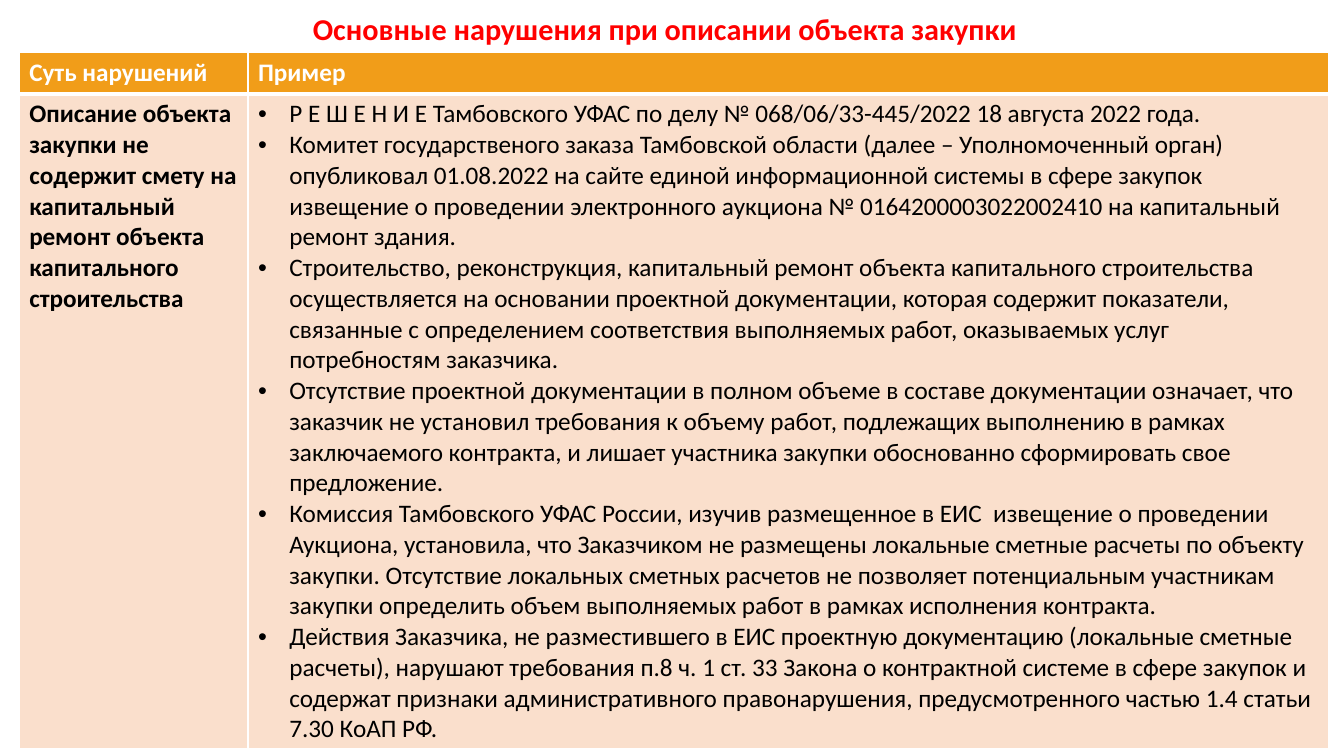
from lxml.etree import SubElement
from pptx import Presentation
from pptx.dml.color import RGBColor
from pptx.enum.text import MSO_ANCHOR, PP_ALIGN
from pptx.oxml.ns import qn
from pptx.util import Inches, Pt

RED = RGBColor(0xFF, 0x00, 0x00)
WHITE = RGBColor(0xFF, 0xFF, 0xFF)
BLACK = RGBColor(0x00, 0x00, 0x00)
ORANGE = RGBColor(0xF1, 0x9D, 0x19)
PEACH = RGBColor(0xFA, 0xDF, 0xCC)

TITLE = "Основные нарушения при описании объекта закупки"
HEADERS = ["Суть нарушений", "Пример"]
VIOLATION = (
    "Описание объекта закупки не содержит смету на капитальный ремонт "
    "объекта капитального строительства"
)
EXAMPLES = [
    "Р Е Ш Е Н И Е Тамбовского УФАС по делу № 068/06/33-445/2022 "
    "18 августа 2022 года.",
    "Комитет государственого заказа Тамбовской области (далее – Уполномоченный "
    "орган) опубликовал 01.08.2022 на сайте единой информационной системы в сфере "
    "закупок извещение о проведении электронного аукциона № 0164200003022002410 "
    "на капитальный ремонт здания.",
    "Строительство, реконструкция, капитальный ремонт объекта капитального "
    "строительства осуществляется на основании проектной документации, которая "
    "содержит показатели, связанные с определением соответствия выполняемых работ, "
    "оказываемых услуг потребностям заказчика.",
    "Отсутствие проектной документации в полном объеме в составе документации "
    "означает, что заказчик не установил требования к объему работ, подлежащих "
    "выполнению в рамках заключаемого контракта, и лишает участника закупки "
    "обоснованно сформировать свое предложение.",
    "Комиссия Тамбовского УФАС России, изучив размещенное в ЕИС  извещение о "
    "проведении Аукциона, установила, что Заказчиком не размещены локальные "
    "сметные расчеты по объекту закупки. Отсутствие локальных сметных расчетов не "
    "позволяет потенциальным участникам закупки определить объем выполняемых работ "
    "в рамках исполнения контракта.",
    "Действия Заказчика, не разместившего в ЕИС проектную документацию (локальные "
    "сметные расчеты), нарушают требования п.8 ч. 1 ст. 33 Закона о контрактной "
    "системе в сфере закупок и содержат признаки административного правонарушения, "
    "предусмотренного частью 1.4 статьи 7.30 КоАП РФ.",
]


def write(frame, lines, size=18, color=BLACK, bold=False, bullet=False,
          align=PP_ALIGN.LEFT, spacing=1.0, font="Calibri"):
    """Fill a text frame with one paragraph per line."""
    frame.word_wrap = True
    for number, line in enumerate(lines):
        para = frame.add_paragraph() if number else frame.paragraphs[0]
        para.alignment = align
        para.line_spacing = spacing
        if bullet:
            properties = para._p.get_or_add_pPr()
            properties.set("marL", str(Inches(0.31)))
            properties.set("indent", str(-Inches(0.31)))
            SubElement(properties, qn("a:buFont"), typeface="Arial")
            SubElement(properties, qn("a:buChar"), char="•")
        span = para.add_run()
        span.text = line
        span.font.name = font
        span.font.size = Pt(size)
        span.font.bold = bold
        span.font.color.rgb = color


class Page:
    """Current slide with the shared style of its elements."""

    def __init__(self, deck):
        self.slide = deck.slides.add_slide(deck.slide_layouts[6])

    def title(self, text, left, top, width, height):
        box = self.slide.shapes.add_textbox(
            Inches(left), Inches(top), Inches(width), Inches(height))
        frame = box.text_frame
        frame.vertical_anchor = MSO_ANCHOR.MIDDLE
        frame.margin_right = Inches(0.25)
        write(frame, [text], size=21.6, color=RED, bold=True,
              align=PP_ALIGN.CENTER, spacing=0.9)

    def table(self, left, top, columns, rows):
        shape = self.slide.shapes.add_table(
            len(rows), len(columns), Inches(left), Inches(top),
            Inches(sum(columns)), Inches(sum(rows)))
        table = shape.table
        table.horz_banding = False
        for column, width in zip(table.columns, columns):
            column.width = Inches(width)
        for row, height in zip(table.rows, rows):
            row.height = Inches(height)
        return table

    def cell(self, cell, lines, fill, top=1, bottom=1, **style):
        self.borders(cell, lnL=1, lnR=1, lnT=top, lnB=bottom)
        cell.fill.solid()
        cell.fill.fore_color.rgb = fill
        write(cell.text_frame, lines, **style)

    def borders(self, cell, **widths):
        properties = cell._tc.get_or_add_tcPr()
        for side, width in widths.items():
            line = SubElement(properties, qn(f"a:{side}"), w=str(Pt(width)))
            fill = SubElement(line, qn("a:solidFill"))
            SubElement(fill, qn("a:srgbClr"), val=str(WHITE))


def main():
    deck = Presentation()
    deck.slide_width = Inches(13.33)
    deck.slide_height = Inches(7.5)
    page = Page(deck)

    # Heading
    page.title(TITLE, 0.92, 0.08, 11.5, 0.44)

    # Violations table, the second row tall enough for all examples
    table = page.table(0.19, 0.52, columns=[2.27, 10.72], rows=[0.41, 6.5])
    for index, header in enumerate(HEADERS):
        page.cell(table.cell(0, index), [header], ORANGE, bottom=3,
                  color=WHITE, bold=True)
    page.cell(table.cell(1, 0), [VIOLATION], PEACH, top=3, bold=True)
    page.cell(table.cell(1, 1), EXAMPLES, PEACH, top=3, bullet=True)

    deck.save("out.pptx")


if __name__ == "__main__":
    main()
